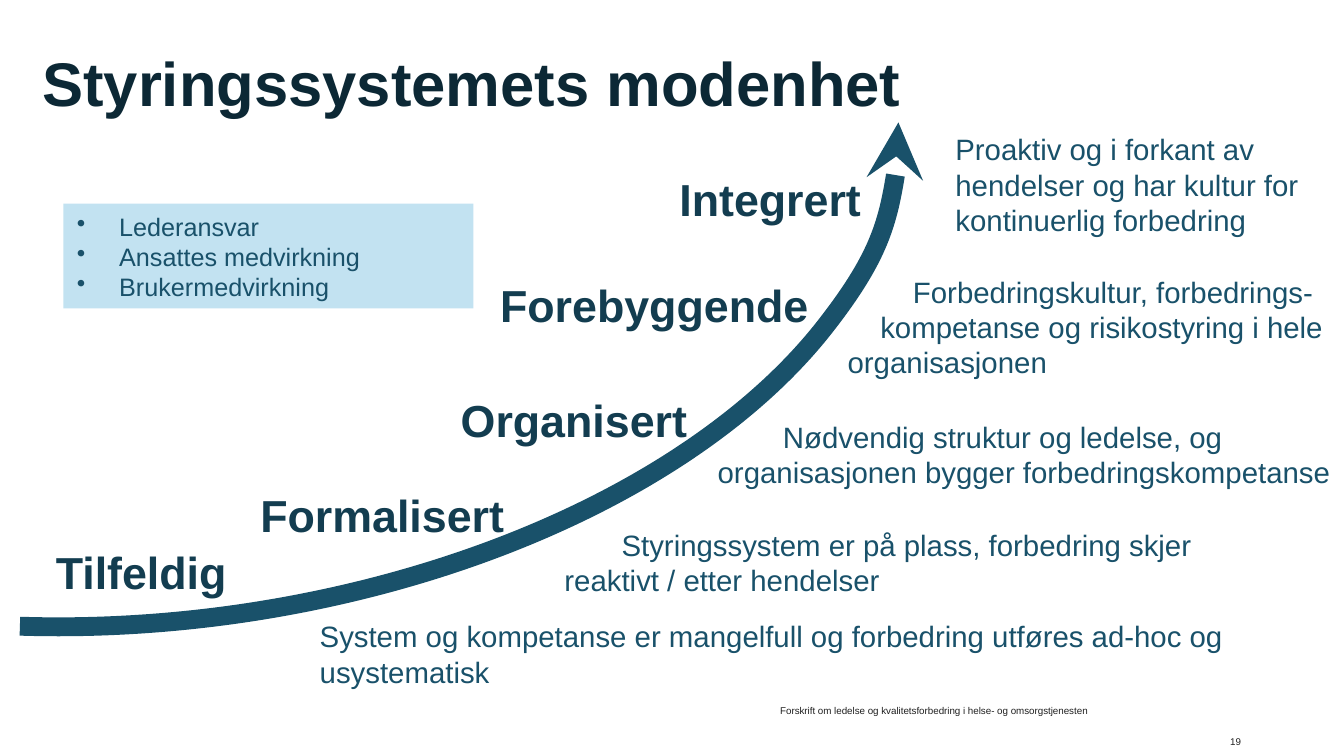
"""Build the slide that shows the maturity curve of a management system."""
import pptx
import pptx.dml.color
import pptx.enum.shapes
import pptx.enum.text
import pptx.oxml.ns
import pptx.util
from lxml import etree

COLORS = {"title": "0C2835", "level": "133D50", "curve": "19516A", "panel": "C2E2F1", "footer": "202020"}
FORMATS = {
    "title": {"size": pptx.util.Pt(44), "bold": True},
    "level": {"size": pptx.util.Pt(32), "bold": True},
    "curve": {"size": pptx.util.Pt(21), "bold": False},
    "panel": {"size": pptx.util.Pt(18), "bold": False},
    "footer": {"size": pptx.util.Pt(7), "bold": False},
}
ALIGN = pptx.enum.text.PP_ALIGN
ANCHOR = pptx.enum.text.MSO_ANCHOR
SHAPE = pptx.enum.shapes.MSO_SHAPE

presentation = pptx.Presentation()
presentation.slide_width = pptx.util.Inches(13.34)
presentation.slide_height = pptx.util.Inches(7.5)
slide = presentation.slides.add_slide(presentation.slide_layouts[6])
column = presentation.slide_width / 100
row = presentation.slide_height / 100


def place(left, top, width, height):
    """Turn percentages of the slide into lengths."""
    return int(left * column), int(top * row), int(width * column), int(height * row)


def write(shape, style, color, lines, indents=(), bullet=None, wrap=True,
          anchor=ANCHOR.TOP, align=ALIGN.LEFT, inset=1):
    """Fill a shape with one formatted paragraph per line."""
    frame = shape.text_frame
    settings = {
        "text": "\n".join(lines), "word_wrap": wrap, "vertical_anchor": anchor,
        "margin_left": int(inset * column), "margin_right": int(inset * column),
        "margin_top": int(inset * row), "margin_bottom": int(inset * row),
    }
    for name, value in settings.items():
        setattr(frame, name, value)
    for index, paragraph in enumerate(frame.paragraphs):
        paragraph.alignment = align
        properties = paragraph._p.get_or_add_pPr()
        if bullet:
            hanging = int(3.15 * column)
            properties.set("marL", str(hanging))
            properties.set("indent", str(-hanging))
            etree.SubElement(properties, pptx.oxml.ns.qn("a:buChar"), char=bullet)
        elif index < len(indents):
            properties.set("indent", str(int(indents[index] * column)))
        for name, value in FORMATS[style].items():
            setattr(paragraph.font, name, value)
        paragraph.font.name = "Arial"
        paragraph.font.color.rgb = pptx.dml.color.RGBColor.from_string(COLORS[color])


title = slide.shapes.add_textbox(*place(3.15, 3.07, 89.73, 12.67))
write(title, "title", "title", ["Styringssystemets modenhet"], anchor=ANCHOR.BOTTOM, inset=0)

footer = slide.shapes.add_textbox(*place(57.05, 92, 45.65, 4))
write(footer, "footer", "footer",
      ["Forskrift om ledelse og kvalitetsforbedring i helse- og omsorgstjenesten"], anchor=ANCHOR.MIDDLE)

slide_number = slide.shapes.add_textbox(*place(86.21, 97.07, 7.12, 2.13))
write(slide_number, "footer", "footer", ["19"], anchor=ANCHOR.MIDDLE, align=ALIGN.RIGHT)

curve = slide.shapes.add_shape(SHAPE.ARC, *place(-42.5, -29.73, 109.67, 111.73))
curve.shadow.inherit = False
curve.rotation = 352.7
curve.adjustments[0] = 146.34
curve.adjustments[1] = 215.13
curve.fill.background()
curve.line.color.rgb = pptx.dml.color.RGBColor.from_string(COLORS["curve"])
curve.line.width = pptx.util.Pt(13.5)
curve._element.spPr.xfrm.set("flipV", "1")
etree.SubElement(curve.line._get_or_add_ln(), pptx.oxml.ns.qn("a:tailEnd"), type="stealth")

panel = slide.shapes.add_shape(SHAPE.RECTANGLE, *place(4.72, 26.93, 30.51, 13.87))
panel.shadow.inherit = False
panel.fill.solid()
panel.fill.fore_color.rgb = pptx.dml.color.RGBColor.from_string(COLORS["panel"])
panel.line.fill.background()
write(panel, "panel", "curve", ["Lederansvar", "Ansattes medvirkning", "Brukermedvirkning"], bullet="•")

levels = [
    ("Tilfeldig", 3.15, 71.07, 16.57),
    ("Formalisert", 18.37, 63.47, 20.46),
    ("Organisert", 33.28, 50.93, 19.72),
    ("Forebyggende", 36.21, 35.73, 26.61),
    ("Integrert", 49.55, 21.73, 15.74),
]
for name, left, top, width in levels:
    label = slide.shapes.add_textbox(*place(left, top, width, 8.93))
    write(label, "level", "level", [name], wrap=False)

descriptions = [
    (22.79, 80.8, 77.21, 11.2, (),
     ["System og kompetanse er mangelfull og forbedring utføres ad-hoc og usystematisk"]),
    (41, 68.67, 53.45, 11.33, (4.25,),
     ["Styringssystem er på plass, forbedring skjer reaktivt / etter hendelser"]),
    (52.4, 54.4, 50, 11.33, (4.86,),
     ["Nødvendig struktur og ledelse, og", "organisasjonen bygger forbedringskompetanse"]),
    (62.07, 35.2, 50, 16.13, (4.86, 2.43),
     ["Forbedringskultur, forbedrings-", "kompetanse og risikostyring i hele", "organisasjonen"]),
    (70.09, 16.4, 50, 16.13, (),
     ["Proaktiv og i forkant av", "hendelser og har kultur for", "kontinuerlig forbedring"]),
]
for left, top, width, height, indents, lines in descriptions:
    description = slide.shapes.add_textbox(*place(left, top, width, height))
    write(description, "curve", "curve", lines, indents)

presentation.save("out.pptx")
